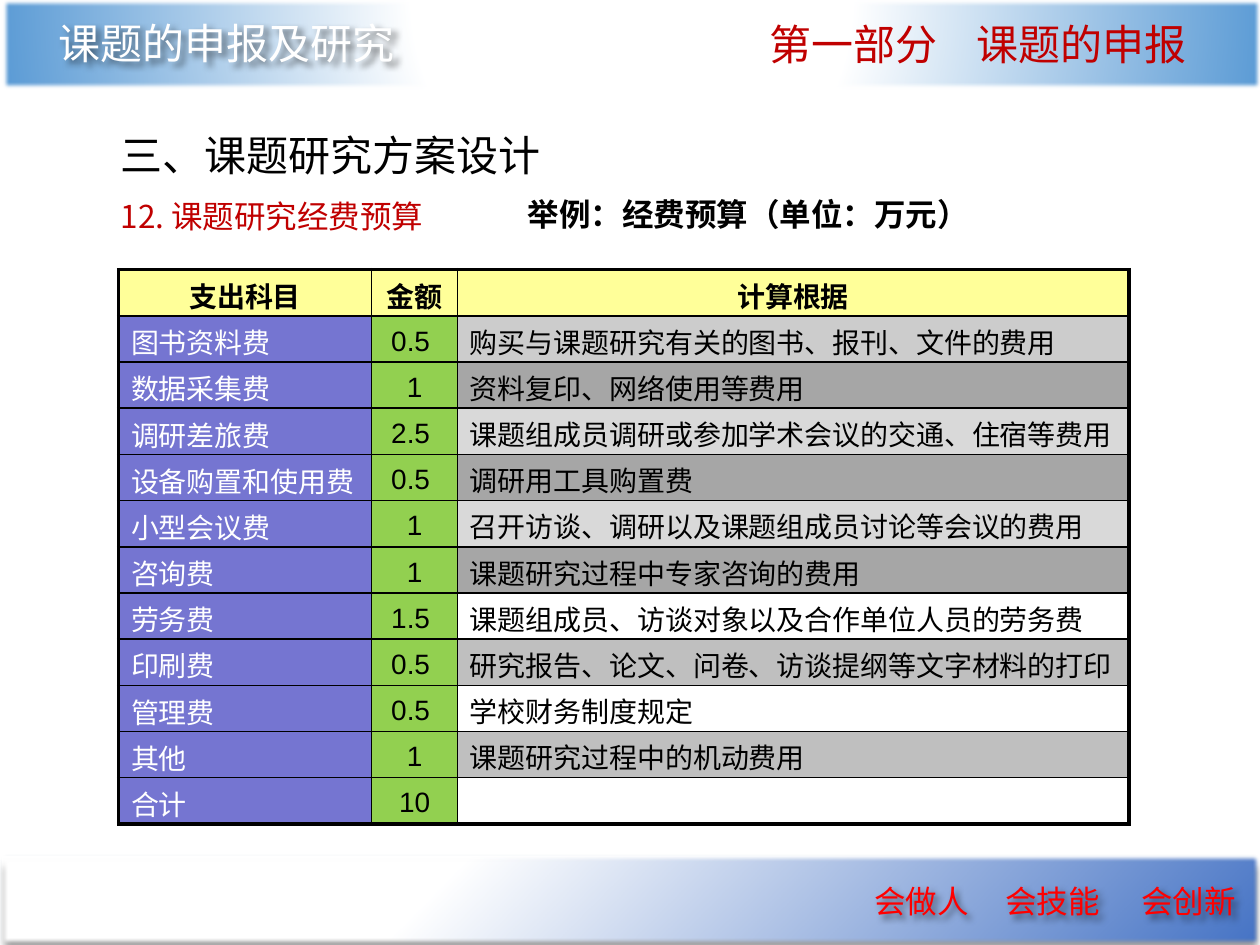
from dataclasses import dataclass

from lxml.etree import SubElement
from pptx import Presentation
from pptx.dml.color import RGBColor
from pptx.enum.shapes import MSO_SHAPE
from pptx.enum.text import MSO_ANCHOR, MSO_AUTO_SIZE, PP_ALIGN
from pptx.oxml import parse_xml
from pptx.oxml.ns import nsdecls, qn
from pptx.util import Inches, Pt

COLS, ROWS = 100, 75  # grid over the slide


@dataclass(frozen=True)
class Theme:
    black: str = "000000"
    white: str = "FFFFFF"
    red: str = "FF0000"
    dark: str = "C00000"
    sky: str = "5B9BD5"
    blue: str = "4472C4"
    edge: str = "43739E"
    head: str = "FFFF99"
    item: str = "7575D1"
    sum: str = "92D050"
    big: int = 24
    mid: int = 18
    small: int = 16
    thick: float = 2.25
    thin: float = 1
    sans: str = "Noto Sans CJK SC"
    foot: str = "Noto Sans CJK JP"
    latin: str = "Arial"


def cast(blur, dist, turn, alpha):
    return (f'<a:outerShdw blurRad="{Pt(blur)}" dist="{Pt(dist)}" dir="{turn * 60000}">'
            f'<a:srgbClr val="000000"><a:alpha val="{alpha * 1000}"/></a:srgbClr></a:outerShdw>')


def effect(shape, inner):
    shape.shadow.inherit = False
    old = shape._element.spPr.find(qn("a:effectLst"))
    new = parse_xml(f'<a:effectLst {nsdecls("a")}>{inner}</a:effectLst>')
    old.getparent().replace(old, new)


class Deck:
    def __init__(self, theme):
        self.theme = theme
        self.prs = Presentation()
        self.prs.slide_width, self.prs.slide_height = Inches(10), Inches(7.5)
        self.slide = self.prs.slides.add_slide(self.prs.slide_layouts[5])

    def grid(self, x, y, w, h):
        col, row = self.prs.slide_width / COLS, self.prs.slide_height / ROWS
        return [round(n) for n in (x * col, y * row, w * col, h * row)]

    def run(self, para, text, size, color, font=None, bold=False):
        font = font or self.theme.sans
        run = para.add_run()
        run.text = text
        run.font.size, run.font.bold, run.font.name = Pt(size), bold, font
        run.font.color.rgb = RGBColor.from_string(color)
        east = self.theme.sans if font == self.theme.latin else font
        SubElement(run._r.get_or_add_rPr(), qn("a:ea")).set("typeface", east)

    def bar(self, at, color, focus, line=None, shade=""):
        bar = self.slide.shapes.add_shape(MSO_SHAPE.RECTANGLE, *self.grid(*at))
        stops = "".join(f'<a:gs pos="{pos * 1000}"><a:srgbClr val="{tint}"/></a:gs>'
                        for pos, tint in ((0, self.theme.white), (35, self.theme.white), (100, color)))
        sides = " ".join(f'{side}="{n * 1000}"' for side, n in zip("ltrb", focus))
        bar._element.spPr.find(qn("a:prstGeom")).addnext(parse_xml(
            f'<a:gradFill {nsdecls("a")} rotWithShape="1"><a:gsLst>{stops}</a:gsLst>'
            f'<a:path path="circle"><a:fillToRect {sides}/></a:path></a:gradFill>'))
        if line:
            bar.line.color.rgb = RGBColor.from_string(line)
            bar.line.width = Pt(self.theme.thin)
        else:
            bar.line.fill.background()
        effect(bar, shade + f'<a:softEdge rad="{Pt(2.5)}"/>')

    def fill(self, shape, at, text, size, color, tabs=(), top=False, **style):
        shape.left, shape.top, shape.width, shape.height = self.grid(*at)
        frame = shape.text_frame
        frame.word_wrap, frame.auto_size = True, MSO_AUTO_SIZE.NONE
        frame.vertical_anchor = MSO_ANCHOR.TOP if top else MSO_ANCHOR.MIDDLE
        if top:
            frame.margin_top = 0
        para = frame.paragraphs[0]
        para.alignment = PP_ALIGN.LEFT
        if tabs:
            stops = SubElement(para._p.get_or_add_pPr(), qn("a:tabLst"))
            for stop in tabs:
                tab = SubElement(stops, qn("a:tab"))
                tab.set("pos", str(self.grid(stop, 0, 0, 0)[0]))
                tab.set("algn", "l")
        self.run(para, text, size, color, **style)

    def title(self, at, text, size, color):
        self.fill(self.slide.shapes.title, at, text, size, color)

    def text(self, at, text, size, color, shade="", **style):
        box = self.slide.shapes.add_textbox(*self.grid(*at))
        self.fill(box, at, text, size, color, **style)
        if shade:
            effect(box, shade)

    def cell(self, cell, text, fill, color, edges, align, anchor, font, bold):
        cell.margin_top, cell.margin_bottom = Inches(0.04), 0
        cell.vertical_anchor = anchor
        props = cell._tc.get_or_add_tcPr()
        for side, width in zip("LRTB", edges):
            props.append(parse_xml(
                f'<a:ln{side} {nsdecls("a")} w="{Pt(width)}"><a:solidFill>'
                f'<a:srgbClr val="{self.theme.black}"/></a:solidFill></a:ln{side}>'))
        if fill:
            cell.fill.solid()
            cell.fill.fore_color.rgb = RGBColor.from_string(fill)
        else:
            cell.fill.background()
        para = cell.text_frame.paragraphs[0]
        para.alignment = align
        if text:
            self.run(para, text, self.theme.small, color, font, bold)

    def table(self, at, wide, head, rows):
        t = self.theme
        data = [(*head, t.head)] + rows
        last, end = len(data) - 1, len(wide) - 1
        table = self.slide.shapes.add_table(len(data), len(wide), *self.grid(*at)).table
        table.first_row = table.horz_banding = False
        for col, width in zip(table.columns, wide):
            col.width = self.grid(width, 0, 0, 0)[0]
        for r, (*texts, tint) in enumerate(data):
            for c, text in enumerate(texts):
                edges = [t.thick if hit else t.thin
                         for hit in (c == 0, c == end, r == 0, r == last)]
                mid = r == 0 or c == 1
                self.cell(
                    table.cell(r, c), text,
                    t.head if r == 0 else (t.item, t.sum, tint)[c],
                    t.white if r and c == 0 else t.black, edges,
                    PP_ALIGN.CENTER if mid else PP_ALIGN.LEFT,
                    MSO_ANCHOR.MIDDLE if r and c < end else MSO_ANCHOR.TOP,
                    t.sans if r and c == end else t.latin, r == 0)


HEAD = ("支出科目", "金额", "计算根据")
COSTS = [
    ("图书资料费", "0.5 ", "购买与课题研究有关的图书、报刊、文件的费用", "CCCCCC"),
    ("数据采集费", "1", "资料复印、网络使用等费用", "A6A6A6"),
    ("调研差旅费", "2.5 ", "课题组成员调研或参加学术会议的交通、住宿等费用", "D9D9D9"),
    ("设备购置和使用费", "0.5 ", "调研用工具购置费", "A6A6A6"),
    ("小型会议费", "1", "召开访谈、调研以及课题组成员讨论等会议的费用", "D9D9D9"),
    ("咨询费", "1", "课题研究过程中专家咨询的费用", "A6A6A6"),
    ("劳务费", "1.5 ", "课题组成员、访谈对象以及合作单位人员的劳务费", None),
    ("印刷费", "0.5 ", "研究报告、论文、问卷、访谈提纲等文字材料的打印", "BFBFBF"),
    ("管理费", "0.5 ", "学校财务制度规定", None),
    ("其他", "1", "课题研究过程中的机动费用", "BFBFBF"),
    ("合计", "10", "", None),
]


def main():
    t = Theme()
    deck = Deck(t)
    glow = cast(4, 3, 45, 50)

    # Footer band and motto
    deck.bar((0, 67.8, 100, 7.2), t.blue, (0, 0, 100, 100), t.edge, cast(4, 4, 90, 38))
    deck.text((68.4, 69.5, 31.6, 4), "会做人\t会技能\t会创新", t.mid, t.red, glow,
              tabs=(10.4, 21.2), font=t.foot)

    # Header band with course and part names
    deck.bar((0.1, -0.1, 100, 7.2), t.sky, (50, -80, 50, 180))
    deck.text((3.7, 0.9, 32.7, 5), "课题的申报及研究", t.big, t.white, glow)
    deck.text((60.1, 1, 37.3, 5), "第一部分\t课题的申报", t.big, t.dark, tabs=(16.4,))

    # Section title and subheads
    deck.title((8.6, 9.8, 39.6, 5), "三、课题研究方案设计", t.big, t.black)
    deck.text((8.6, 15.6, 32, 5.2), "12. 课题研究经费预算", t.mid, t.dark, top=True)
    deck.text((40.9, 15.5, 38.4, 5.2), "举例：经费预算（单位：万元）", t.mid, t.black,
              top=True, font=t.latin, bold=True)

    # Budget table
    deck.table((9.4, 21.4, 80.2, 44), (20.1, 6.8, 53.3), HEAD, COSTS)

    deck.prs.save("out.pptx")


if __name__ == "__main__":
    main()
